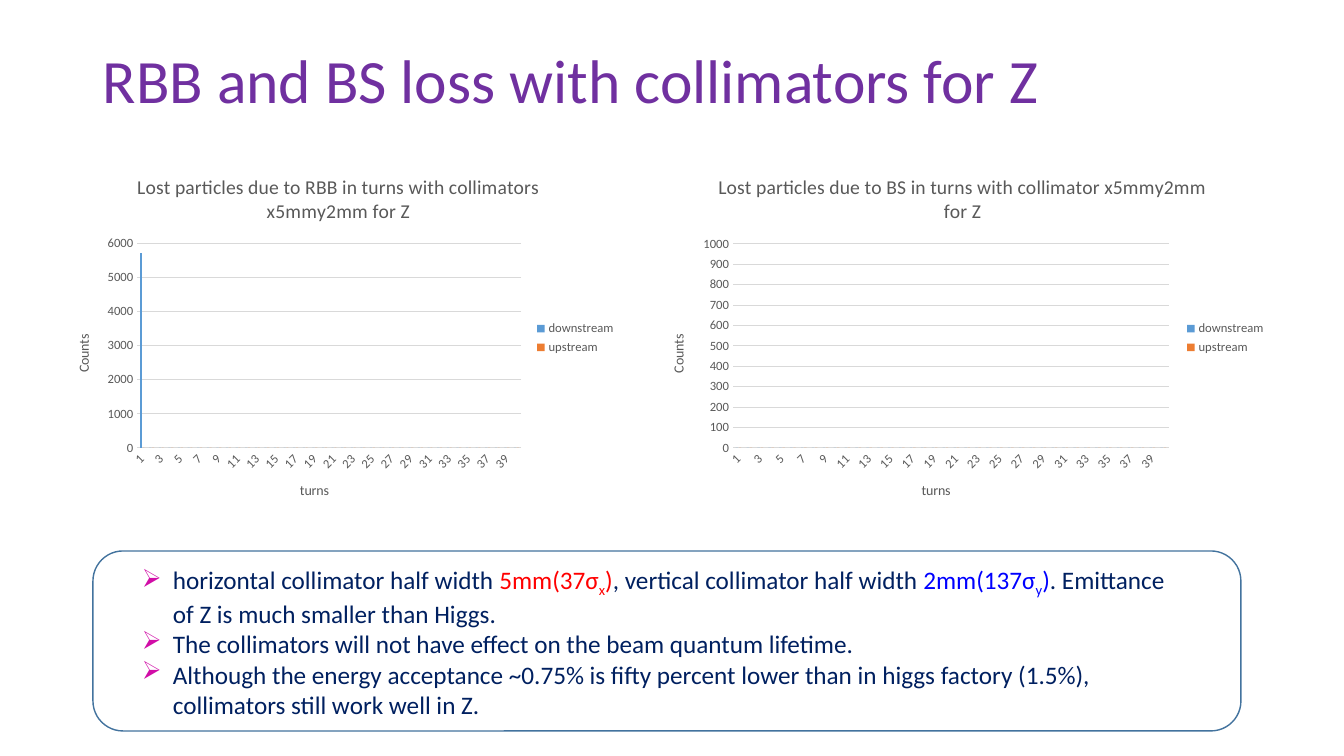
"""Build the slide on beam losses with collimators for Z."""
from dataclasses import dataclass
from typing import Any, NamedTuple, Optional

from lxml import etree
from pptx import Presentation
from pptx import util as u
from pptx.chart.data import CategoryChartData
from pptx.dml.color import RGBColor
from pptx.enum import chart as charts, shapes, text
from pptx.oxml import ns

EMU_PER_PX = 914400 / 100.8
TURNS = 40


@dataclass(frozen=True)
class Theme:
    font: str = "Calibri"
    purple: str = "7030A0"
    navy: str = "002060"
    red: str = "FF0000"
    blue: str = "0000FF"
    bullet: str = "D10DA7"
    outline: str = "43739E"
    grey: str = "595959"
    grid: str = "D9D9D9"
    downstream: str = "5B9BD5"
    upstream: str = "ED7D31"
    title_size: int = 44
    body_size: int = 18
    chart_title_size: int = 14
    axis_title_size: int = 10
    label_size: int = 9


THEME = Theme()


class Box(NamedTuple):
    left: int
    top: int
    width: int
    height: int


class Piece(NamedTuple):
    text: str
    color: str = THEME.navy
    subscript: bool = False


@dataclass(frozen=True)
class LossChart:
    title: str
    box: Box
    plot: Box
    first_turn: int
    maximum: Optional[int] = None


TITLE_BOX = Box(93, 11, 1159, 146)
BODY_BOX = Box(132, 559, 1068, 163)
FRAME_BOX = Box(93, 551, 1148, 180)
RBB = LossChart("Lost particles due to RBB in turns with collimators x5mmy2mm for Z",
                Box(51, 157, 575, 362), Box(137, 243, 384, 205), 5700)
BS = LossChart("Lost particles due to BS in turns with collimator x5mmy2mm for Z",
               Box(649, 157, 627, 362), Box(733, 244, 436, 204), 0, 1000)
BULLETS = [
    [Piece("horizontal collimator half width "),
     Piece("5mm(37σ", THEME.red), Piece("x", THEME.red, True), Piece(")", THEME.red),
     Piece(", vertical collimator half width "),
     Piece("2mm(137σ", THEME.blue), Piece("y", THEME.blue, True), Piece(")", THEME.blue),
     Piece(". Emittance of Z is much smaller than Higgs.")],
    [Piece("The collimators will not have effect on the beam quantum lifetime.")],
    [Piece("Although the energy acceptance ~0.75% is fifty percent lower than in higgs "
           "factory (1.5%), collimators still work well in Z.")],
]


def px(length: int) -> int:
    """Turn px into EMU."""
    return round(length * EMU_PER_PX)


def emu(box: Box) -> list[int]:
    """Turn a box in px into EMU."""
    return [px(length) for length in box]


def apply(target: Any, values: dict[str, Any]) -> None:
    """Set every attribute named in a dict of format values."""
    for name, value in values.items():
        setattr(target, name, value)


def style_font(font: Any, size: int, color: str) -> None:
    """Give a font its face, size and colour."""
    apply(font, {"name": THEME.font, "size": u.Pt(size), "bold": False})
    font.color.rgb = RGBColor.from_string(color)


def style_line(line: Any, color: str, width: float) -> None:
    """Give a line its colour and width."""
    line.color.rgb = RGBColor.from_string(color)
    line.width = u.Pt(width)


def add_title(slide: Any) -> None:
    """Draw the slide title."""
    frame = slide.shapes.add_textbox(*emu(TITLE_BOX)).text_frame
    apply(frame, {"word_wrap": True, "vertical_anchor": text.MSO_ANCHOR.MIDDLE})
    paragraph = frame.paragraphs[0]
    paragraph.line_spacing = 0.9
    run = paragraph.add_run()
    run.text = "RBB and BS loss with collimators for Z"
    style_font(run.font, THEME.title_size, THEME.purple)


def add_bullet(paragraph: Any) -> None:
    """Give a paragraph a hanging coloured arrow bullet."""
    properties = paragraph._p.get_or_add_pPr()
    properties.set("marL", str(px(31)))
    properties.set("indent", str(-px(31)))
    color = etree.SubElement(properties, ns.qn("a:buClr"))
    etree.SubElement(color, ns.qn("a:srgbClr"), val=THEME.bullet)
    etree.SubElement(properties, ns.qn("a:buChar"), char="➢")


def add_body(slide: Any) -> None:
    """Draw the bulleted remarks."""
    frame = slide.shapes.add_textbox(*emu(BODY_BOX)).text_frame
    apply(frame, {"word_wrap": True, "auto_size": text.MSO_AUTO_SIZE.SHAPE_TO_FIT_TEXT})
    for index, pieces in enumerate(BULLETS):
        paragraph = frame.add_paragraph() if index else frame.paragraphs[0]
        add_bullet(paragraph)
        for piece in pieces:
            run = paragraph.add_run()
            run.text = piece.text
            style_font(run.font, THEME.body_size, piece.color)
            if piece.subscript:
                run._r.get_or_add_rPr().set("baseline", "-25000")


def add_frame(slide: Any) -> None:
    """Draw the rounded outline around the remarks."""
    shape = slide.shapes.add_shape(shapes.MSO_SHAPE.ROUNDED_RECTANGLE, *emu(FRAME_BOX))
    shape.shadow.inherit = False
    shape.fill.background()
    style_line(shape.line, THEME.outline, 1)


def write_title(owner: Any, wording: str, size: int) -> None:
    """Write the title of a chart or an axis."""
    frame = (owner.chart_title if hasattr(owner, "chart_title") else owner.axis_title).text_frame
    frame.text = wording
    style_font(frame.paragraphs[0].runs[0].font, size, THEME.grey)


def place_plot(chart: Any, loss: LossChart) -> None:
    """Fix the inner plot area as fractions of the chart."""
    area = chart.element.xpath(".//c:plotArea")[0]
    for old in area.findall(ns.qn("c:layout")):
        area.remove(old)
    layout = etree.Element(ns.qn("c:layout"))
    area.insert(0, layout)
    manual = etree.SubElement(layout, ns.qn("c:manualLayout"))
    box, plot = loss.box, loss.plot
    values = {"layoutTarget": "inner", "xMode": "edge", "yMode": "edge",
              "x": round((plot.left - box.left) / box.width, 3),
              "y": round((plot.top - box.top) / box.height, 3),
              "w": round(plot.width / box.width, 3),
              "h": round(plot.height / box.height, 3)}
    for name, value in values.items():
        etree.SubElement(manual, ns.qn(f"c:{name}"), val=str(value))


def add_loss_chart(slide: Any, loss: LossChart) -> None:
    """Draw one column chart of lost particles per turn."""
    data = CategoryChartData()
    data.categories = [str(turn) for turn in range(1, TURNS + 1)]
    data.add_series("downstream", [loss.first_turn] + [0] * (TURNS - 1))
    data.add_series("upstream", [0] * TURNS)
    chart = slide.shapes.add_chart(charts.XL_CHART_TYPE.COLUMN_CLUSTERED,
                                   *emu(loss.box), data).chart
    style_font(chart.font, THEME.axis_title_size, THEME.grey)
    apply(chart, {"has_title": True, "has_legend": True})
    write_title(chart, loss.title, THEME.chart_title_size)
    apply(chart.legend, {"position": charts.XL_LEGEND_POSITION.RIGHT,
                         "include_in_layout": False})
    style_font(chart.legend.font, THEME.label_size, THEME.grey)
    plot = chart.plots[0]
    apply(plot, {"gap_width": 219, "overlap": -27, "vary_by_categories": False})
    for series, color in zip(plot.series, (THEME.downstream, THEME.upstream)):
        series.format.fill.solid()
        series.format.fill.fore_color.rgb = RGBColor.from_string(color)
    for axis, wording in ((chart.category_axis, "turns"), (chart.value_axis, "Counts")):
        apply(axis, {"major_tick_mark": charts.XL_TICK_MARK.NONE,
                     "minor_tick_mark": charts.XL_TICK_MARK.NONE})
        style_font(axis.tick_labels.font, THEME.label_size, THEME.grey)
        write_title(axis, wording, THEME.axis_title_size)
    style_line(chart.category_axis.format.line, THEME.grid, 0.75)
    chart.value_axis.format.line.fill.background()
    style_line(chart.value_axis.major_gridlines.format.line, THEME.grid, 0.75)
    if loss.maximum:
        chart.value_axis.maximum_scale = loss.maximum
    for query, angle in ((".//c:catAx/c:txPr/a:bodyPr", "-60000000"),
                         (".//c:valAx/c:title//a:bodyPr", "-5400000")):
        apply_rotation = chart.element.xpath(query)[0].set
        apply_rotation("rot", angle)
        apply_rotation("vert", "horz")
    place_plot(chart, loss)


def main() -> None:
    """Build and save the slide."""
    presentation = Presentation()
    apply(presentation, {"slide_width": px(1344), "slide_height": px(756)})
    slide = presentation.slides.add_slide(presentation.slide_layouts[6])
    add_title(slide)
    add_body(slide)
    add_loss_chart(slide, RBB)
    add_frame(slide)
    add_loss_chart(slide, BS)
    presentation.save("out.pptx")


if __name__ == "__main__":
    main()
